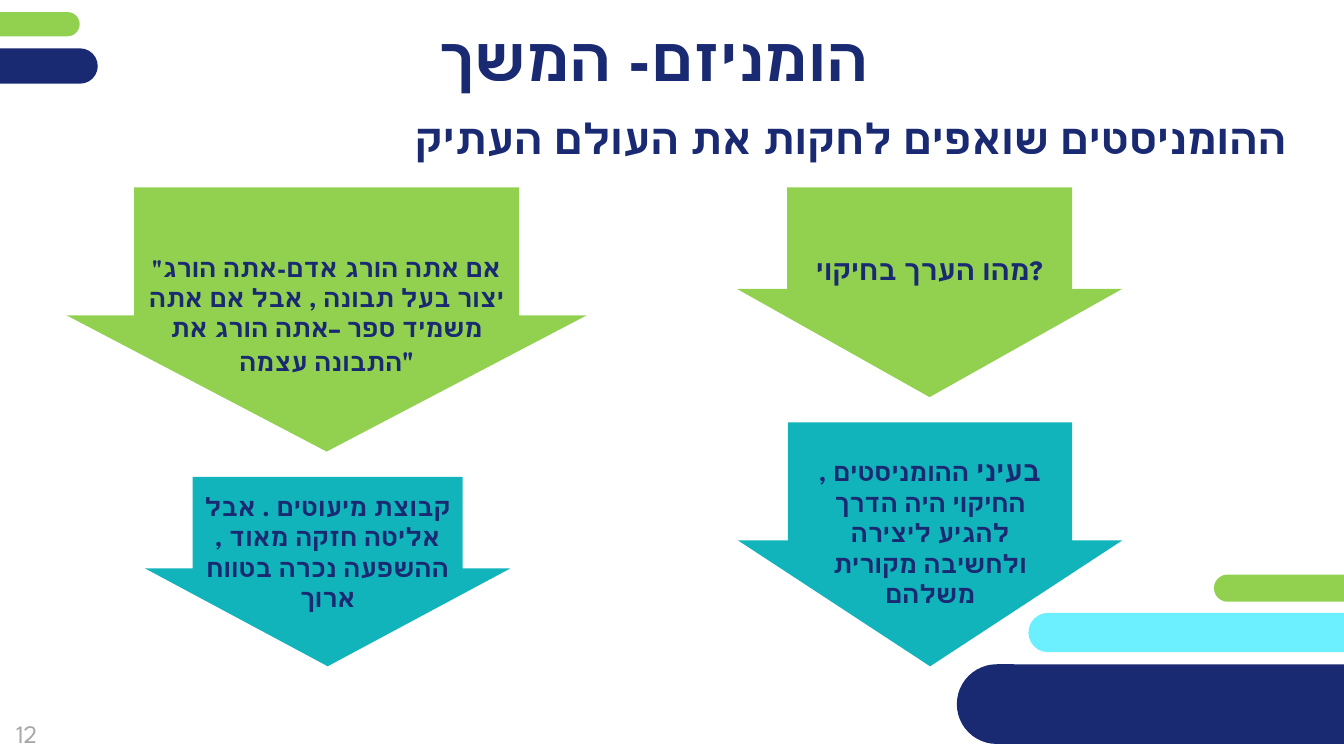
from dataclasses import dataclass

from lxml import etree
from pptx import Presentation
from pptx.dml.color import RGBColor
from pptx.enum import shapes as sh, text as tx
from pptx.oxml import ns
from pptx.util import Inches, Pt

GREEN = RGBColor(0x92, 0xD0, 0x50)
NAVY = RGBColor(0x19, 0x2A, 0x72)
AQUA = RGBColor(0x6C, 0xF0, 0xFF)
TEAL = RGBColor(0x12, 0xB4, 0xBC)
GRAY = RGBColor(0xA6, 0xA6, 0xA6)
FONT = "League Spartan"
MID = tx.MSO_ANCHOR.MIDDLE
CENTER = tx.PP_ALIGN.CENTER
RIGHT = tx.PP_ALIGN.RIGHT

Box = tuple[float, float, float, float]
Run = tuple[str, int]


@dataclass
class Bar:
    box: Box
    color: RGBColor


@dataclass
class Arrow:
    box: Box
    color: RGBColor
    top: float
    runs: list[Run]


BARS = [
    Bar((-1.51, 0.12, 2.3, 0.24), GREEN),
    Bar((-1.89, 0.48, 2.86, 0.35), NAVY),
    Bar((10.2, 6.08, 5.21, 0.39), AQUA),
    Bar((9.49, 6.59, 4.51, 0.79), NAVY),
    Bar((12.04, 5.7, 2.59, 0.27), GREEN),
]
ARROWS = [
    Arrow((7.31, 1.86, 3.82, 2.08), GREEN, 0.38, [("מהו הערך בחיקוי?", 20)]),
    Arrow((7.32, 4.19, 3.81, 2.42), TEAL, 0.71, [
        ("בעיני ", 20),
        ("ההומניסטים , החיקוי היה הדרך להגיע ליצירה ולחשיבה מקורית משלהם", 18),
    ]),
    Arrow((0.66, 1.86, 5.16, 2.62), GREEN, 0.95, [
        ("\"אם אתה הורג אדם-אתה הורג יצור בעל תבונה , אבל אם אתה "
         "משמיד ספר –אתה הורג את התבונה עצמה", 18),
        ("\"", 20),
    ]),
    Arrow((1.44, 4.73, 3.62, 1.88), TEAL, 0.38, [
        ("קבוצת מיעוטים . אבל אליטה חזקה מאוד , ההשפעה נכרה בטווח ארוך", 18),
    ]),
]


def place(shape, box: Box) -> None:
    shape.left, shape.top, shape.width, shape.height = map(Inches, box)


def write(shape, runs: list[Run], align=CENTER, color: RGBColor = NAVY,
          bold: bool = True, rtl: bool = False) -> None:
    frame = shape.text_frame
    frame.word_wrap = True
    frame.auto_size = tx.MSO_AUTO_SIZE.NONE
    frame.vertical_anchor = MID
    para = frame.paragraphs[0]
    para.alignment = align
    if rtl:
        para._p.get_or_add_pPr().set("rtl", "1")
    for words, size in runs:
        run = para.add_run()
        run.text = words
        font = run.font
        font.name, font.size, font.bold = FONT, Pt(size), bold
        font.color.rgb = color
        etree.SubElement(run._r.get_or_add_rPr(), ns.qn("a:cs"), typeface=FONT)


def trim(shape) -> None:
    frame = shape.text_frame
    frame.margin_left = frame.margin_right = 0
    frame.margin_top = frame.margin_bottom = 0


def draw(slide, kind, box: Box, color: RGBColor):
    shape = slide.shapes.add_shape(kind, *map(Inches, box))
    shape.shadow.inherit = False
    shape.fill.solid()
    shape.fill.fore_color.rgb = color
    shape.line.fill.background()
    return shape


def add_bar(slide, bar: Bar) -> None:
    shape = draw(slide, sh.MSO_SHAPE.ROUNDED_RECTANGLE, bar.box, bar.color)
    shape.adjustments[0] = 0.5


def add_arrow(slide, arrow: Arrow) -> None:
    shape = draw(slide, sh.MSO_SHAPE.DOWN_ARROW, arrow.box, arrow.color)
    shape.adjustments[0] = 0.74
    shape.adjustments[1] = 0.516
    write(shape, arrow.runs)
    shape.text_frame.margin_top = Inches(arrow.top)


def main() -> None:
    deck = Presentation()
    deck.slide_width, deck.slide_height = Inches(13.33), Inches(7.5)
    slide = deck.slides.add_slide(deck.slide_layouts[5])

    for bar in BARS:
        add_bar(slide, bar)

    page = slide.shapes.add_textbox(*map(Inches, (-0.18, 6.99, 0.89, 0.57)))
    write(page, [("12", 18)], color=GRAY, bold=False)

    title = slide.shapes.title
    place(title, (1.12, 0.17, 10.72, 0.79))
    trim(title)
    write(title, [("הומניזם- המשך", 44)], rtl=True)

    lead = slide.shapes.add_textbox(*map(Inches, (0.56, 1.12, 12.21, 0.5)))
    trim(lead)
    write(lead, [("ההומניסטים שואפים לחקות את העולם העתיק", 30)], RIGHT, rtl=True)

    for arrow in ARROWS:
        add_arrow(slide, arrow)

    deck.save("out.pptx")


if __name__ == "__main__":
    main()
